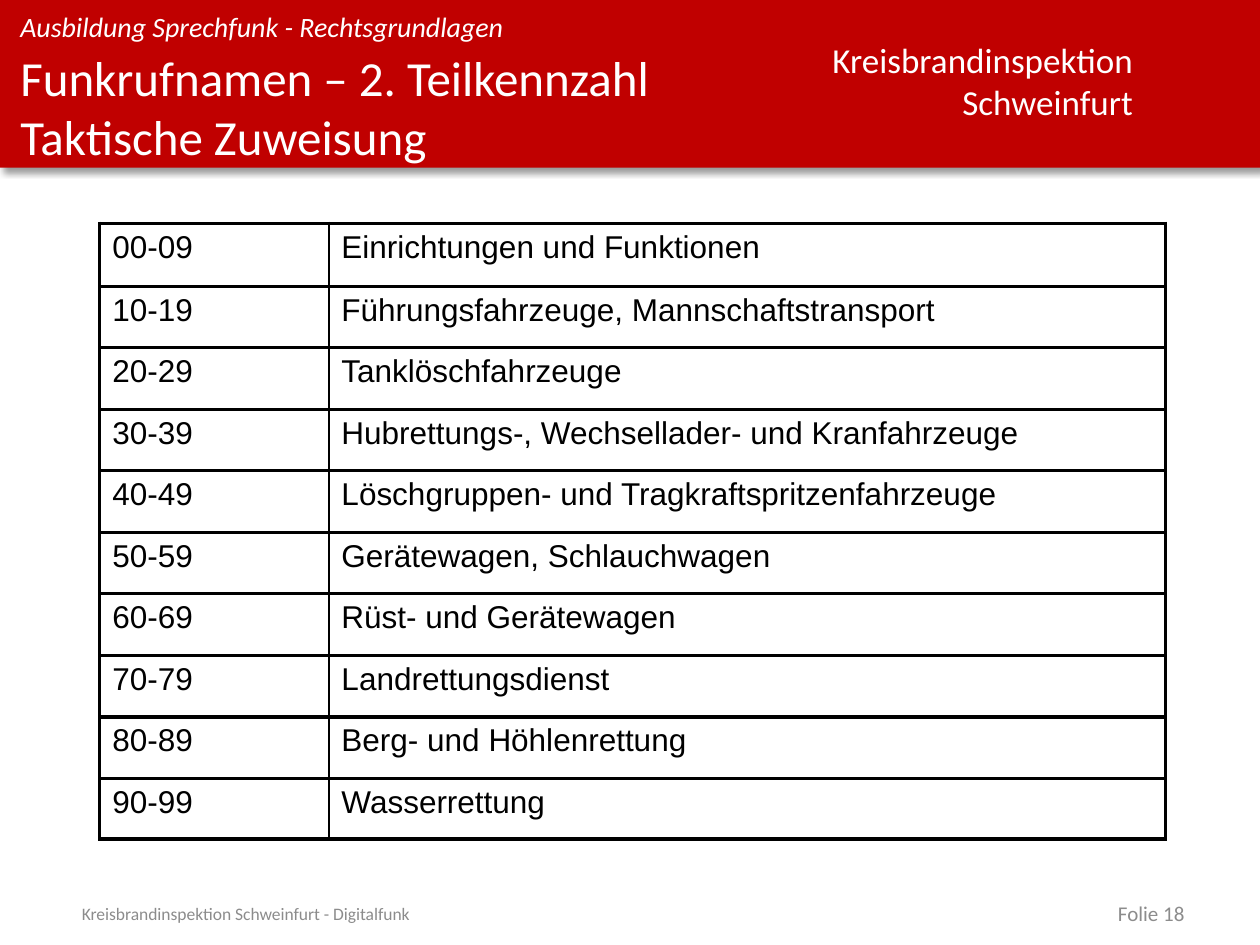
from dataclasses import dataclass

import lxml.etree
import pptx
import pptx.dml.color
import pptx.enum.shapes
import pptx.enum.text
import pptx.oxml.ns
import pptx.util
from pptx.util import Cm

Align = pptx.enum.text.PP_ALIGN
Anchor = pptx.enum.text.MSO_ANCHOR
qn = pptx.oxml.ns.qn


@dataclass(frozen=True)
class Style:
    font: str
    size: int
    color: str
    slant: bool = False


@dataclass(frozen=True)
class Theme:
    red: str = "C00000"
    black: str = "000000"
    thick: float = 2.25
    thin: float = 1
    head: Style = Style("Calibri", 28, "FFFFFF")
    topic: Style = Style("Calibri", 16, "FFFFFF", True)
    office: Style = Style("Calibri", 20, "FFFFFF")
    foot: Style = Style("Calibri", 10, "8C8C8C")
    page: Style = Style("Calibri", 12, "8C8C8C")
    cell: Style = Style("Arial", 18, "000000")


@dataclass(frozen=True)
class Label:
    text: str
    left: float
    top: float
    width: float
    height: float
    style: Style
    align: Align = Align.LEFT
    anchor: Anchor = Anchor.TOP
    wrap: bool = True
    inset: bool = True


THEME = Theme()

TITLE = Label("Funkrufnamen – 2. Teilkennzahl\vTaktische Zuweisung",
              0.41, 0.89, 16.05, 2.51, THEME.head, anchor=Anchor.MIDDLE, inset=False)
LABELS = [
    Label("Kreisbrandinspektion\nSchweinfurt", 16.46, 0.66, 6.63, 1.96,
          THEME.office, Align.RIGHT, wrap=False),
    Label("Ausbildung Sprechfunk - Rechtsgrundlagen", 0.41, 0.2, 16.05, 0.69,
          THEME.topic, inset=False),
    Label("Kreisbrandinspektion Schweinfurt - Digitalfunk", 1.4, 18.16, 15.34, 0.51,
          THEME.foot, anchor=Anchor.MIDDLE),
    Label("Folie 18", 18.21, 18.16, 5.92, 0.51, THEME.page, Align.RIGHT, Anchor.MIDDLE),
]
GROUPS = [
    "Einrichtungen und Funktionen",
    "Führungsfahrzeuge, Mannschaftstransport",
    "Tanklöschfahrzeuge",
    "Hubrettungs-, Wechsellader- und Kranfahrzeuge",
    "Löschgruppen- und Tragkraftspritzenfahrzeuge",
    "Gerätewagen, Schlauchwagen",
    "Rüst- und Gerätewagen",
    "Landrettungsdienst",
    "Berg- und Höhlenrettung",
    "Wasserrettung",
]
COLS = [4.62, 16.87]
ROWS = [1.27] + [1.24] * 8 + [1.22]


def write(frame, text: str, style: Style, align: Align = Align.LEFT) -> None:
    frame.text = text
    for para in frame.paragraphs:
        para.alignment = align
        font = para.font
        font.name = style.font
        font.size = pptx.util.Pt(style.size)
        font.italic = style.slant
        font.color.rgb = pptx.dml.color.RGBColor.from_string(style.color)


def place(shape, label: Label) -> None:
    shape.left, shape.top = Cm(label.left), Cm(label.top)
    shape.width, shape.height = Cm(label.width), Cm(label.height)
    frame = shape.text_frame
    frame.auto_size = pptx.enum.text.MSO_AUTO_SIZE.NONE
    frame.word_wrap = label.wrap
    frame.vertical_anchor = label.anchor
    if not label.inset:
        frame.margin_left = frame.margin_right = 0
        frame.margin_top = frame.margin_bottom = 0
    write(frame, label.text, label.style, label.align)


def tint(parent, color: str):
    return lxml.etree.SubElement(parent, qn("a:srgbClr"), val=color)


def draw_bar(slide) -> None:
    bar = slide.shapes.add_shape(
        pptx.enum.shapes.MSO_SHAPE.RECTANGLE, 0, 0, Cm(25.4), Cm(3.38))
    bar.fill.solid()
    bar.fill.fore_color.rgb = pptx.dml.color.RGBColor.from_string(THEME.red)
    bar.line.fill.background()
    bar.shadow.inherit = False
    effects = bar._element.spPr.find(qn("a:effectLst"))
    shade = lxml.etree.SubElement(
        effects, qn("a:outerShdw"), blurRad="50800", dist="38100",
        dir="2700000", algn="tl", rotWithShape="0")
    lxml.etree.SubElement(tint(shade, THEME.black), qn("a:alpha"), val="40000")
    slide.shapes._spTree.insert(2, bar._element)


def edge(cell, side: str, width: float) -> None:
    line = lxml.etree.SubElement(
        cell._tc.get_or_add_tcPr(), qn(f"a:ln{side}"), w=str(pptx.util.Pt(width)))
    tint(lxml.etree.SubElement(line, qn("a:solidFill")), THEME.black)


def draw_grid(slide) -> None:
    grid = slide.shapes.add_table(
        len(ROWS), len(COLS), Cm(2.01), Cm(4.5), Cm(sum(COLS)), Cm(sum(ROWS))).table
    grid.first_row = grid.horz_banding = False
    for col, width in zip(grid.columns, COLS):
        col.width = Cm(width)
    for i, (row, height, group) in enumerate(zip(grid.rows, ROWS, GROUPS)):
        row.height = Cm(height)
        for j, text in enumerate([f"{i}0-{i}9", group]):
            cell = row.cells[j]
            write(cell.text_frame, text, THEME.cell)
            edge(cell, "L", THEME.thin if j else THEME.thick)
            edge(cell, "R", THEME.thick if j else THEME.thin)
            edge(cell, "T", THEME.thick)
            edge(cell, "B", THEME.thick)
            cell.fill.background()


def main() -> None:
    deck = pptx.Presentation()
    deck.slide_width, deck.slide_height = Cm(25.4), Cm(19.05)
    slide = deck.slides.add_slide(deck.slide_layouts[5])
    draw_bar(slide)
    place(slide.shapes.title, TITLE)
    for label in LABELS:
        place(slide.shapes.add_textbox(0, 0, 0, 0), label)
    draw_grid(slide)
    deck.save("out.pptx")


if __name__ == "__main__":
    main()
